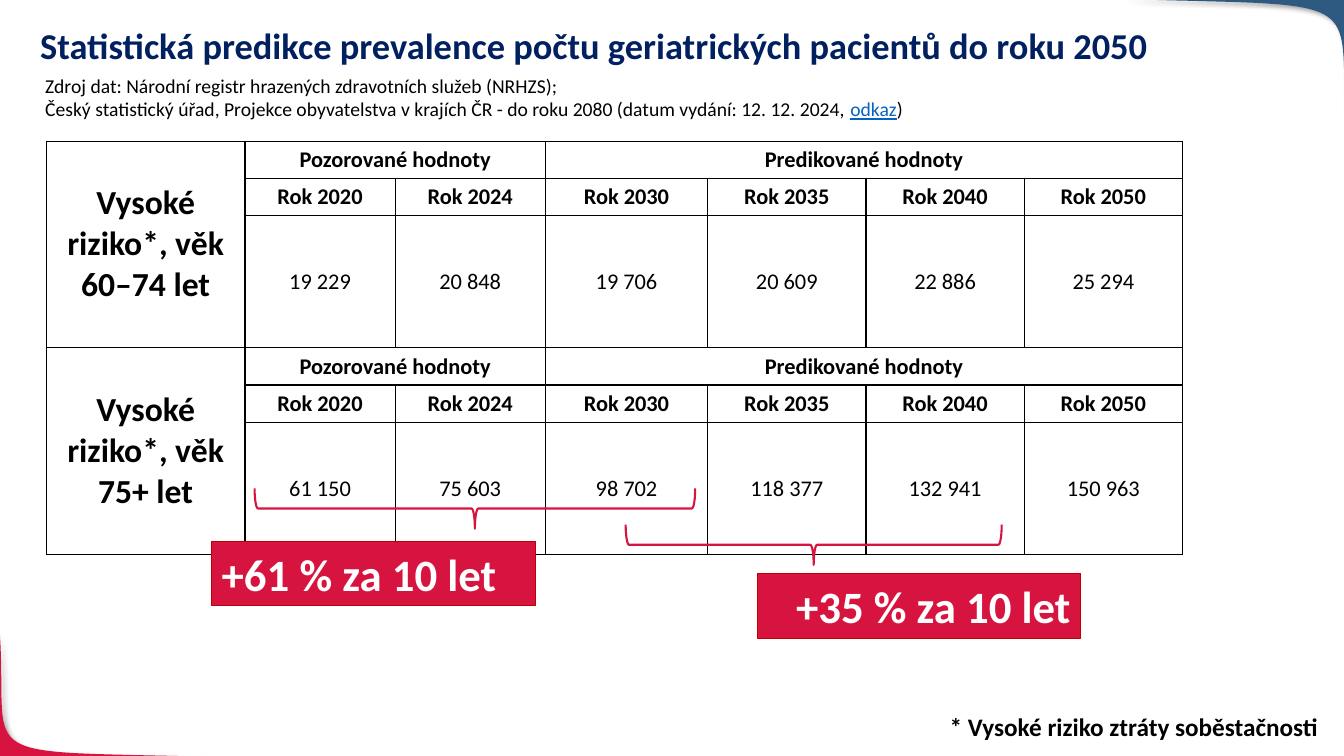
"""Builds the slide with predicted counts of geriatric patients up to 2050."""
from lxml.etree import SubElement
from pptx import Presentation
from pptx.dml.color import RGBColor
from pptx.enum.shapes import MSO_SHAPE as Preset
from pptx.enum.text import MSO_ANCHOR as Anchor, PP_ALIGN as Align
from pptx.oxml import parse_xml
from pptx.oxml.ns import nsdecls, qn
from pptx.util import Inches, Pt

RED = RGBColor(0xD7, 0x14, 0x40)
DARK_RED = RGBColor(0xC0, 0x00, 0x00)
BLUE = RGBColor(0x2E, 0x59, 0x80)
NAVY = RGBColor(0x00, 0x20, 0x60)
LINK_BLUE = RGBColor(0x05, 0x63, 0xC1)
BLACK = RGBColor(0x00, 0x00, 0x00)
WHITE = RGBColor(0xFF, 0xFF, 0xFF)


def add_run(paragraph, text, size, color=BLACK, bold=False):
    run = paragraph.add_run()
    run.text = text
    run.font.name = "Calibri"
    run.font.size = Pt(size)
    run.font.color.rgb = color
    run.font.bold = bold
    return run


def fill_cell(cell, text, size, bold=True):
    paragraph = cell.text_frame.paragraphs[0]
    paragraph.alignment = Align.CENTER
    add_run(paragraph, text, size, BLACK, bold)


presentation = Presentation()
presentation.slide_width = Inches(13.33)
presentation.slide_height = Inches(7.5)
slide = presentation.slides.add_slide(presentation.slide_layouts[6])
shapes = slide.shapes

corners = [
    (RED, [(2.13, 7.51), (-0.34, 7.44), (0.08, 7.59), (0, 6.3)], (-0.01, 7.51)),
    (BLUE, [(11.11, -0.01), (13.7, 0.07), (13.26, -0.1), (13.35, 1.42)], (13.35, -0.01)),
]
STEPS = 40
for color, curve, corner in corners:
    points = []
    for step in range(STEPS + 1):
        t = step / STEPS
        weights = [(1 - t) ** 3, 3 * t * (1 - t) ** 2, 3 * t ** 2 * (1 - t), t ** 3]
        points.append(tuple(
            Inches(sum(weight * point[axis] for weight, point in zip(weights, curve)))
            for axis in (0, 1)
        ))
    points.append((Inches(corner[0]), Inches(corner[1])))
    builder = shapes.build_freeform(*points[0])
    builder.add_line_segments(points[1:], close=True)
    shape = builder.convert_to_shape()
    shape.fill.solid()
    shape.fill.fore_color.rgb = color
    shape.line.fill.background()
    shape.shadow.inherit = False
    effects = shape.element.spPr.find(qn("a:effectLst"))
    effects.append(parse_xml(
        f'<a:outerShdw {nsdecls("a")} blurRad="{Pt(4)}" dist="{Pt(3)}" dir="2700000" '
        'algn="tl" rotWithShape="0"><a:srgbClr val="000000"><a:alpha val="40000"/>'
        '</a:srgbClr></a:outerShdw>'
    ))

title = shapes.add_textbox(Inches(0.3), Inches(0.18), Inches(11.5), Inches(0.59))
title.text_frame.word_wrap = True
title.text_frame.vertical_anchor = Anchor.MIDDLE
paragraph = title.text_frame.paragraphs[0]
paragraph.line_spacing = 0.9
add_run(paragraph, "Statistická predikce prevalence počtu geriatrických pacientů do roku 2050",
        26, NAVY, True)

source_note = shapes.add_textbox(Inches(0.35), Inches(0.68), Inches(12.2), Inches(0.57))
source_note.text_frame.word_wrap = True
add_run(source_note.text_frame.paragraphs[0],
        "Zdroj dat: Národní registr hrazených zdravotních služeb (NRHZS);", 14)
paragraph = source_note.text_frame.add_paragraph()
add_run(paragraph, "Český statistický úřad, Projekce obyvatelstva v krajích ČR - do roku 2080 "
        "(datum vydání: 12. 12. 2024, ", 14)
add_run(paragraph, "odkaz", 14, LINK_BLUE).font.underline = True
add_run(paragraph, ")", 14)

years = [2020, 2024, 2030, 2035, 2040, 2050]
column_widths = [1.97, 1.49, 1.49, 1.61, 1.57, 1.57, 1.57]
row_heights = [0.37, 0.37, 1.31]
risk_groups = [
    (1.4, "60–74 let", ["19 229", "20 848", "19 706", "20 609", "22 886", "25 294"]),
    (3.45, "75+ let", ["61 150", "75 603", "98 702", "118 377", "132 941", "150 963"]),
]
for top, age, values in risk_groups:
    frame = shapes.add_table(3, 7, Inches(0.46), Inches(top),
                             Inches(sum(column_widths)), Inches(sum(row_heights)))
    table = frame.table
    table.first_row = False
    table.horz_banding = False
    for column, width in zip(table.columns, column_widths):
        column.width = Inches(width)
    for row, height in zip(table.rows, row_heights):
        row.height = Inches(height)
    for cell in table.iter_cells():
        cell.vertical_anchor = Anchor.MIDDLE
        properties = cell._tc.get_or_add_tcPr()
        for side in ("lnL", "lnR", "lnT", "lnB"):
            border = SubElement(properties, qn(f"a:{side}"), w=str(Pt(1)))
            border_fill = SubElement(border, qn("a:solidFill"))
            SubElement(border_fill, qn("a:srgbClr"), val=str(BLACK))
        cell.fill.background()
    table.cell(0, 0).merge(table.cell(2, 0))
    table.cell(0, 1).merge(table.cell(0, 2))
    table.cell(0, 3).merge(table.cell(0, 6))
    fill_cell(table.cell(0, 0), f"Vysoké riziko*, věk {age}", 24)
    fill_cell(table.cell(0, 1), "Pozorované hodnoty", 16)
    fill_cell(table.cell(0, 3), "Predikované hodnoty", 16)
    for index, (year, value) in enumerate(zip(years, values), start=1):
        fill_cell(table.cell(1, index), f"Rok {year}", 16)
        value_cell = table.cell(2, index)
        value_cell.margin_left = value_cell.margin_right = Inches(0.01)
        value_cell.margin_top = Inches(0.01)
        value_cell.margin_bottom = 0
        fill_cell(value_cell, value, 16, False)

growth_notes = [
    ("+61 % za 10 let", Align.LEFT, (2.1, 5.37), (4.51, 2.86, 4.37)),
    ("+35 % za 10 let", Align.RIGHT, (7.51, 5.69), (7.87, 3.54, 3.73)),
]
for text, alignment, (left, top), (brace_left, brace_top, brace_length) in growth_notes:
    label = shapes.add_shape(Preset.RECTANGLE, Inches(left), Inches(top),
                             Inches(3.21), Inches(0.64))
    label.shadow.inherit = False
    label.fill.solid()
    label.fill.fore_color.rgb = RED
    label.line.color.rgb = DARK_RED
    label.line.width = Pt(0.75)
    label.text_frame.word_wrap = True
    label.text_frame.vertical_anchor = Anchor.TOP
    paragraph = label.text_frame.paragraphs[0]
    paragraph.alignment = alignment
    add_run(paragraph, text, 32, WHITE, True)

    brace = shapes.add_shape(Preset.RIGHT_BRACE, Inches(brace_left), Inches(brace_top),
                             Inches(0.4), Inches(brace_length))
    brace.rotation = 90
    brace.shadow.inherit = False
    brace.fill.background()
    brace.line.color.rgb = RED
    brace.line.width = Pt(1.5)

footnote = shapes.add_textbox(Inches(6.74), Inches(7.01), Inches(6.43), Inches(0.4))
footnote.text_frame.word_wrap = True
paragraph = footnote.text_frame.paragraphs[0]
paragraph.alignment = Align.RIGHT
add_run(paragraph, "* Vysoké riziko ztráty soběstačnosti", 18, BLACK, True)

presentation.save("out.pptx")
